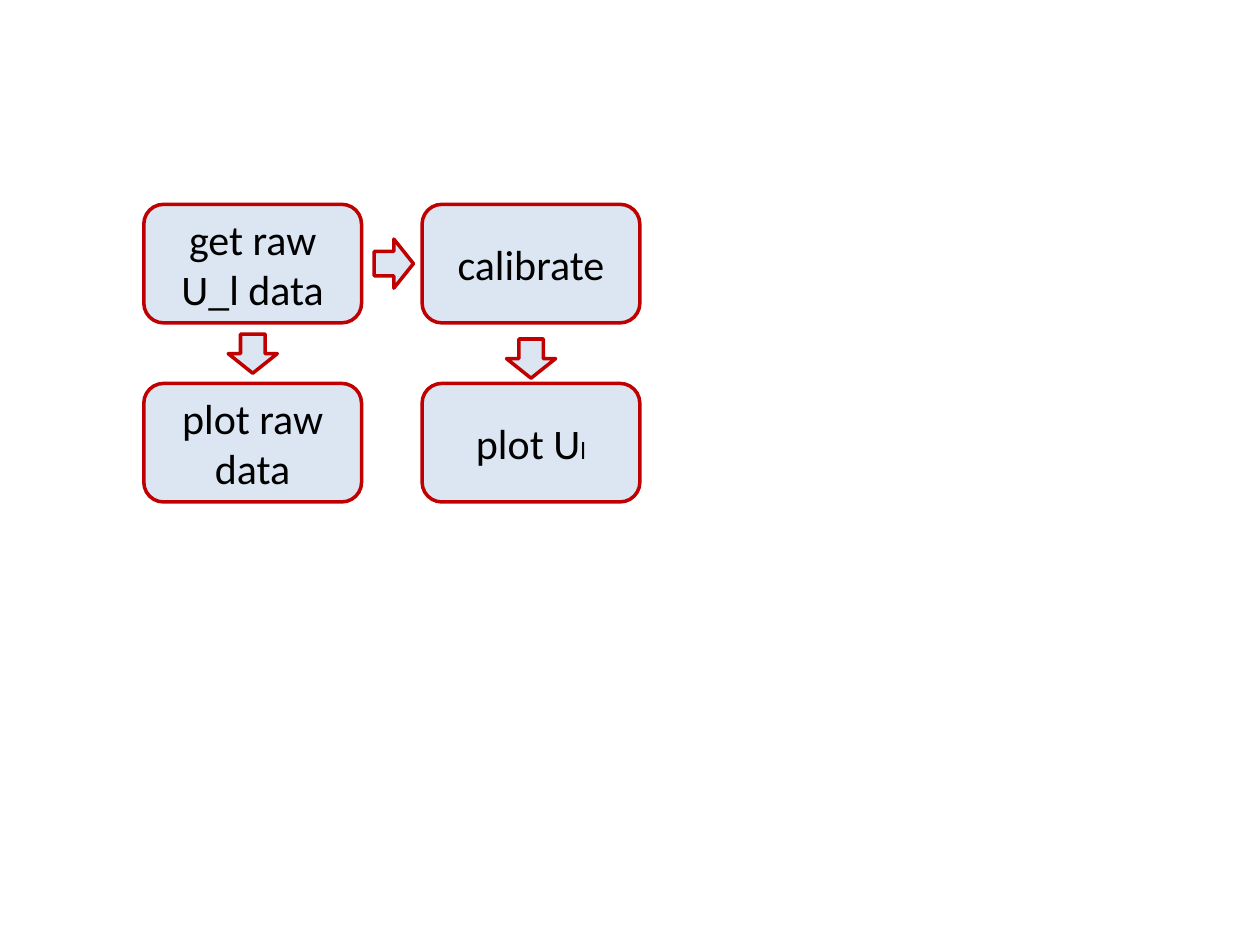
import pptx
import pptx.dml.color
import pptx.enum.shapes
import pptx.enum.text
import pptx.util

Cm = pptx.util.Cm
Pt = pptx.util.Pt
SHAPE = pptx.enum.shapes.MSO_SHAPE

PALE_BLUE = pptx.dml.color.RGBColor(0xDC, 0xE6, 0xF2)
RED = pptx.dml.color.RGBColor(0xC0, 0x00, 0x00)
BLACK = pptx.dml.color.RGBColor(0x00, 0x00, 0x00)

STEP_W, STEP_H = 4.39, 2.39
COLUMN_PITCH, ROW_PITCH = 5.61, 3.61
ARROW_W, ARROW_H = 0.79, 0.99

# Each step: column, row and its runs as (text, size)
STEPS = [
    (0, 0, [("get raw U_l data", 24)]),
    (1, 0, [("calibrate", 24)]),
    (0, 1, [("plot raw data", 24)]),
    (1, 1, [("plot U", 24), ("l", 14)]),
]


def add_run(p, text, *, size, font="Calibri", color=BLACK):
    r = p.add_run()
    r.text = text
    r.font.size = Pt(size)
    r.font.name = font
    r.font.color.rgb = color


def add_outlined(slide, kind, left, top, width, height):
    s = slide.shapes.add_shape(kind, Cm(left), Cm(top), Cm(width), Cm(height))
    s.shadow.inherit = False
    s.fill.solid()
    s.fill.fore_color.rgb = PALE_BLUE
    s.line.color.rgb = RED
    s.line.width = Pt(2)
    return s


def add_step(slide, left, top, runs):
    s = add_outlined(slide, SHAPE.ROUNDED_RECTANGLE, left, top, STEP_W, STEP_H)
    tf = s.text_frame
    tf.word_wrap = True
    tf.vertical_anchor = pptx.enum.text.MSO_ANCHOR.MIDDLE
    p = tf.paragraphs[0]
    p.alignment = pptx.enum.text.PP_ALIGN.CENTER
    for text, size in runs:
        add_run(p, text, size=size)


def add_arrow(slide, center_x, center_y, rotation=0):
    s = add_outlined(slide, SHAPE.RIGHT_ARROW, center_x - ARROW_W / 2,
                     center_y - ARROW_H / 2, ARROW_W, ARROW_H)
    s.rotation = rotation


def add_flow(slide, left, top):
    """Place the two-by-two grid of steps and the arrows between them."""
    for column, row, runs in STEPS:
        add_step(slide, left + column * COLUMN_PITCH, top + row * ROW_PITCH, runs)
    add_arrow(slide, left + 5.04, top + STEP_H / 2)
    for column, drop in enumerate((3.01, 3.11)):
        center_x = left + column * COLUMN_PITCH + STEP_W / 2
        add_arrow(slide, center_x, top + drop, rotation=90)


def main():
    prs = pptx.Presentation()
    prs.slide_width, prs.slide_height = Cm(25.4), Cm(19.05)
    slide = prs.slides.add_slide(prs.slide_layouts[6])
    add_flow(slide, left=2.9, top=4.12)
    prs.save("out.pptx")


if __name__ == "__main__":
    main()
